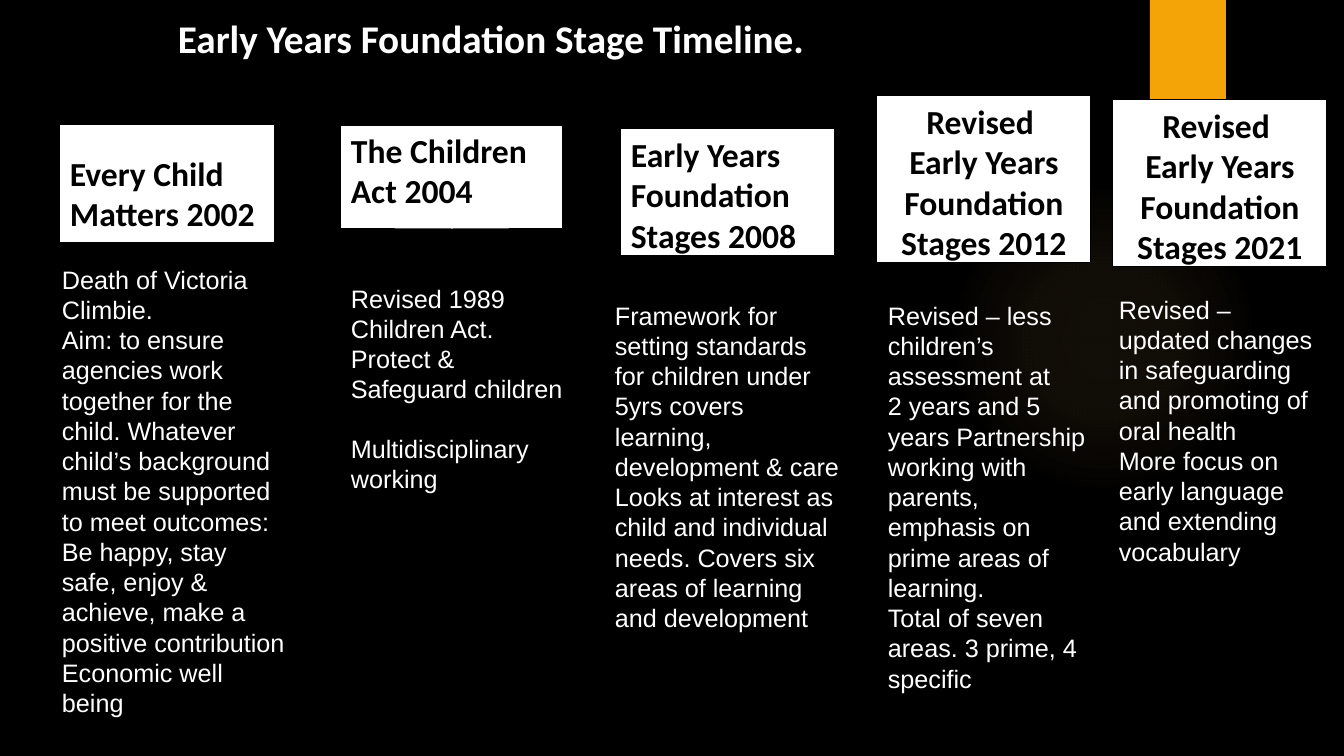
"""Build the Early Years Foundation Stage timeline slide."""
from lxml import etree
from pptx import Presentation
from pptx.dml.color import RGBColor
from pptx.enum.shapes import MSO_SHAPE
from pptx.enum.text import MSO_ANCHOR, PP_ALIGN
from pptx.oxml.ns import nsdecls
from pptx.util import Emu, Pt

TITLE = "Early Years Foundation Stage Timeline."
TITLE_BOX = (168, 9, 711, 105)
LEFT, CENTER = PP_ALIGN.LEFT, PP_ALIGN.CENTER
STAGES = [
    dict(heading=["Every Child Matters 2002"], box=(60, 124, 215, 119), align=LEFT, top=29,
         body=["Death of Victoria Climbie.",
               "Aim: to ensure agencies work together for the child. Whatever child’s background "
               "must be supported to meet outcomes:",
               "Be happy, stay safe, enjoy & achieve, make a positive contribution",
               "Economic well being"],
         body_box=(52, 259, 246, 468), gap=0),
    dict(heading=["The Children Act 2004"], box=(341, 125, 222, 104), align=LEFT, top=5,
         body=["Revised 1989 Children Act. Protect & Safeguard children",
               "Multidisciplinary working"],
         body_box=(341, 278, 246, 224), gap=21),
    dict(heading=["Early Years Foundation Stages 2008"], box=(621, 129, 214, 127), align=LEFT, top=5,
         body=["Framework for setting standards for children under 5yrs covers learning, "
               "development & care",
               "Looks at interest as child and individual needs. Covers six areas of learning "
               "and development"],
         body_box=(605, 295, 246, 346), gap=0),
    dict(heading=["Revised ", "Early Years Foundation Stages 2012"], box=(877, 96, 214, 167),
         align=CENTER, top=5,
         body=["Revised – less", "children’s assessment at",
               "2 years and 5 years Partnership working with parents, emphasis on prime areas "
               "of learning.",
               "Total of seven areas. 3 prime, 4 specific"],
         body_box=(878, 295, 222, 407), gap=0),
    dict(heading=["Revised ", "Early Years Foundation Stages 2021"], box=(1113, 100, 214, 167),
         align=CENTER, top=5,
         body=["Revised –updated changes in safeguarding and promoting of oral health",
               "More focus on early language and extending vocabulary"],
         body_box=(1109, 289, 222, 285), gap=0),
]
GLOW_BOX, BAR_BOX = (949, 184, 310, 310), (1150, 0, 76, 126)
GLOW_STOPS = [(0, 7), (36, 6), (69, 0)]

BLACK = RGBColor(0, 0, 0)
WHITE = RGBColor(0xFF, 0xFF, 0xFF)
ORANGE = RGBColor(0xF5, 0xA4, 0x08)
GLOW = RGBColor(0xFA, 0xC9, 0x6A)


def px(n):
    return Emu(round(n * 914400 / 100.8))


def add_shape(s, kind, box):
    sp = s.shapes.add_shape(kind, *map(px, box))
    sp.shadow.inherit = False
    sp.line.fill.background()
    return sp


def add_glow(s):
    sp = add_shape(s, MSO_SHAPE.OVAL, GLOW_BOX)
    stops = "".join(
        f'<a:gs pos="{pos * 1000}"><a:srgbClr val="{GLOW}"><a:alpha val="{alpha * 1000}"/>'
        f'</a:srgbClr></a:gs>' for pos, alpha in GLOW_STOPS)
    sp._element.spPr.insert(2, etree.fromstring(
        f'<a:gradFill {nsdecls("a")}><a:gsLst>{stops}</a:gsLst><a:path path="circle">'
        '<a:fillToRect l="50000" t="50000" r="50000" b="50000"/></a:path></a:gradFill>'))


def fill_rect(s, box, color):
    sp = add_shape(s, MSO_SHAPE.RECTANGLE, box)
    sp.fill.solid()
    sp.fill.fore_color.rgb = color
    return sp


def write(sp, lines, font, size, color, bold=False, align=LEFT, top=5, gap=0):
    tf = sp.text_frame
    tf.word_wrap = True
    tf.vertical_anchor = MSO_ANCHOR.TOP
    tf.margin_top = px(top)
    for i, line in enumerate(lines):
        p = tf.add_paragraph() if i else tf.paragraphs[0]
        p.text = line
        p.alignment = align
        if i and gap:
            p.space_before = Pt(gap)
        p.font.name, p.font.size, p.font.bold = font, Pt(size), bold
        p.font.color.rgb = color


def main():
    prs = Presentation()
    prs.slide_width, prs.slide_height = px(1344), px(756)
    s = prs.slides.add_slide(prs.slide_layouts[6])
    s.background.fill.solid()
    s.background.fill.fore_color.rgb = BLACK
    add_glow(s)
    fill_rect(s, BAR_BOX, ORANGE)
    write(s.shapes.add_textbox(*map(px, TITLE_BOX)), [TITLE], "Calibri", 28, WHITE, bold=True)
    for stage in STAGES:
        sp = fill_rect(s, stage["box"], WHITE)
        sp.line.color.rgb = BLACK
        sp.line.width = Pt(0.75)
        write(sp, stage["heading"], "Calibri", 24, BLACK, bold=True,
              align=stage["align"], top=stage["top"])
        write(s.shapes.add_textbox(*map(px, stage["body_box"])), stage["body"],
              "Arial", 18, WHITE, gap=stage["gap"])
    prs.save("out.pptx")


if __name__ == "__main__":
    main()
